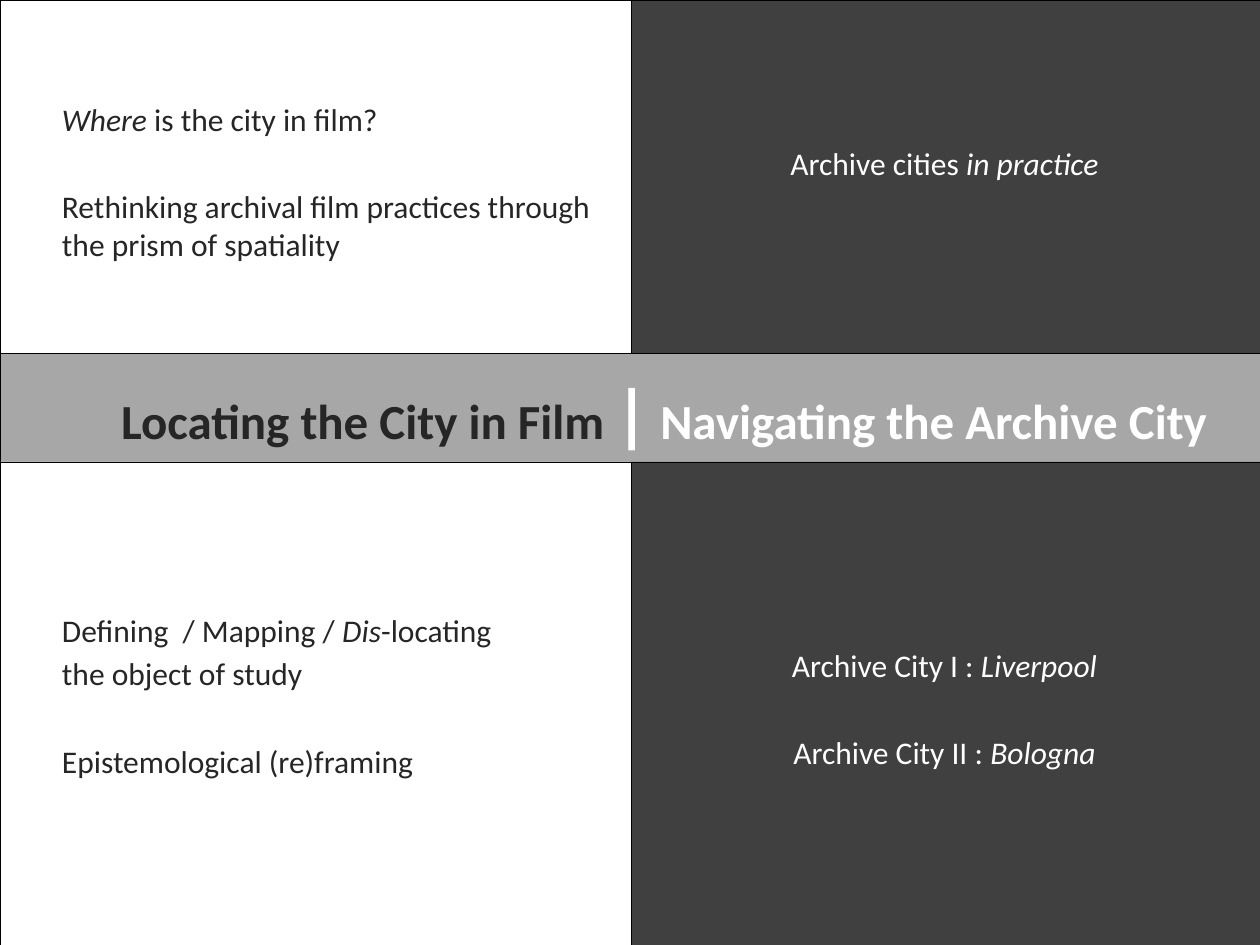
from pptx import Presentation
from pptx.dml.color import RGBColor
from pptx.enum.shapes import MSO_SHAPE
from pptx.enum.text import MSO_ANCHOR, MSO_AUTO_SIZE, PP_ALIGN
from pptx.oxml.ns import qn
from pptx.util import Pt
from lxml import etree

RECT = MSO_SHAPE.RECTANGLE
TOP, MIDDLE = MSO_ANCHOR.TOP, MSO_ANCHOR.MIDDLE
LEFT, CENTER = PP_ALIGN.LEFT, PP_ALIGN.CENTER

# Content: title runs are (text, size, colour)
TITLE = [
    ("Locating the City in Film ", "head", "ink"),
    ("|", "bar", "white"),
    (" ", "space", "ink"),
    ("Navigating the Archive City", "head", "white"),
]

# Panels: column, row, top inset, paragraphs of (space before, runs of (text, italic))
PANELS = [
    ("right", "top", 144, [
        (None, [("Archive cities ", False), ("in practice", True)]),
    ]),
    ("right", "base", 184, [
        (None, [("Archive City I : ", False), ("Liverpool", True)]),
        ("wide", [("Archive City II : ", False), ("Bologna", True)]),
    ]),
    ("left", "top", 100, [
        (None, [("Where", True), (" is the city in film?", False)]),
        ("wide", [("Rethinking archival film practices through "
                   "the prism of spatiality", False)]),
    ]),
    ("left", "base", 149, [
        (None, [("Defining  / Mapping / ", False), ("Dis", True),
                ("-locating", False)]),
        ("tight", [("the object of study", False)]),
        ("wide", [("Epistemological (re)framing", False)]),
    ]),
]

THEME = {
    "font": "Calibri",
    "color": {"ink": "262626", "white": "FFFFFF", "dark": "404040",
              "band": "0D0D0D", "line": "000000"},
    "size": {"head": 28, "bar": 40, "space": 30, "body": 18},
    "gap": {"wide": 28.3, "tight": 3.2},
    "alpha": 36,
    "rule": 0.25,
}

# Layout in px
EMU = 914400 // 126
WIDE, HIGH = 1260, 945
PANEL = 631
ROWS = {"top": (0, 353), "base": (462, HIGH - 462)}
COLS = {  # left edge, fill, text colour, alignment, left inset
    "left": (0, "white", "ink", LEFT, 62),
    "right": (WIDE - PANEL, "dark", "white", CENTER, 13),
}
BAND = (0, 350, 1262, 116)


def px(n):
    return n * EMU


def color(name):
    return RGBColor.from_string(THEME["color"][name])


def paint(shape, fill):
    shape.fill.solid()
    shape.fill.fore_color.rgb = color(fill)
    shape.line.color.rgb = color("line")
    shape.line.width = Pt(THEME["rule"])


def frame(shape, anchor, left, top, right=13, bottom=6):
    box = shape.text_frame
    box.word_wrap = True
    box.auto_size = MSO_AUTO_SIZE.NONE
    box.vertical_anchor = anchor
    box.margin_left, box.margin_top = px(left), px(top)
    box.margin_right, box.margin_bottom = px(right), px(bottom)
    return box


def add_title(slide):
    shape = slide.shapes.title
    shape.left, shape.top, shape.width, shape.height = map(px, BAND)
    paint(shape, "band")
    tint = shape.fill._xPr.find(qn("a:solidFill"))[0]
    etree.SubElement(tint, qn("a:alpha"), val=str(THEME["alpha"] * 1000))
    para = frame(shape, MIDDLE, 79, 14).paragraphs[0]
    para.alignment = CENTER
    para.font.name = THEME["font"]
    para.font.bold = True
    for text, size, ink in TITLE:
        run = para.add_run()
        run.text = text
        run.font.size = Pt(THEME["size"][size])
        run.font.color.rgb = color(ink)


def add_panel(slide, col, row, inset, paras):
    left, fill, ink, align, margin = COLS[col]
    top, height = ROWS[row]
    shape = slide.shapes.add_shape(RECT, px(left), px(top), px(PANEL), px(height))
    shape.shadow.inherit = False
    paint(shape, fill)
    box = frame(shape, TOP, margin, inset)
    for i, (gap, runs) in enumerate(paras):
        para = box.add_paragraph() if i else box.paragraphs[0]
        para.alignment = align
        if gap:
            para.space_before = Pt(THEME["gap"][gap])
        para.font.name = THEME["font"]
        para.font.size = Pt(THEME["size"]["body"])
        para.font.color.rgb = color(ink)
        for text, italic in runs:
            run = para.add_run()
            run.text = text
            run.font.italic = italic


def main():
    deck = Presentation()
    deck.slide_width, deck.slide_height = px(WIDE), px(HIGH)
    slide = deck.slides.add_slide(deck.slide_layouts[5])
    # Title band sits behind the four panels
    add_title(slide)
    for panel in PANELS:
        add_panel(slide, *panel)
    deck.save("out.pptx")


if __name__ == "__main__":
    main()
